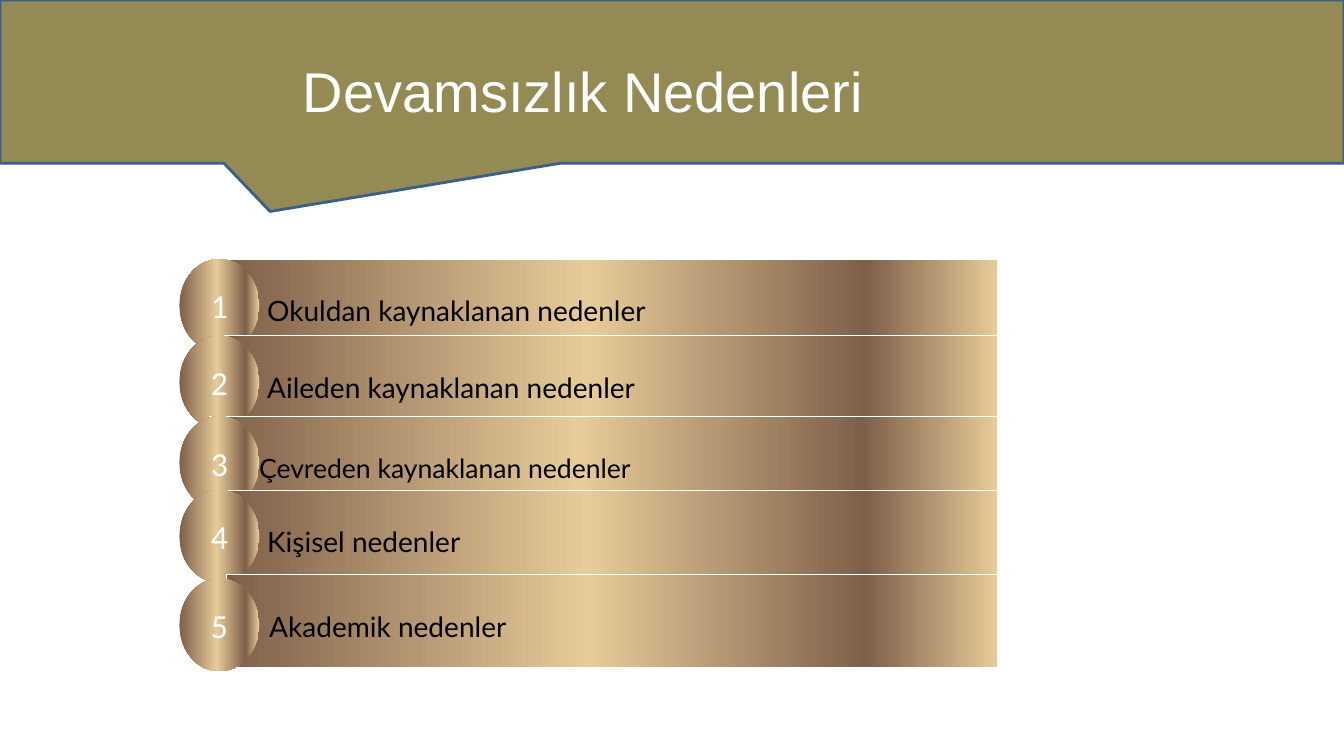
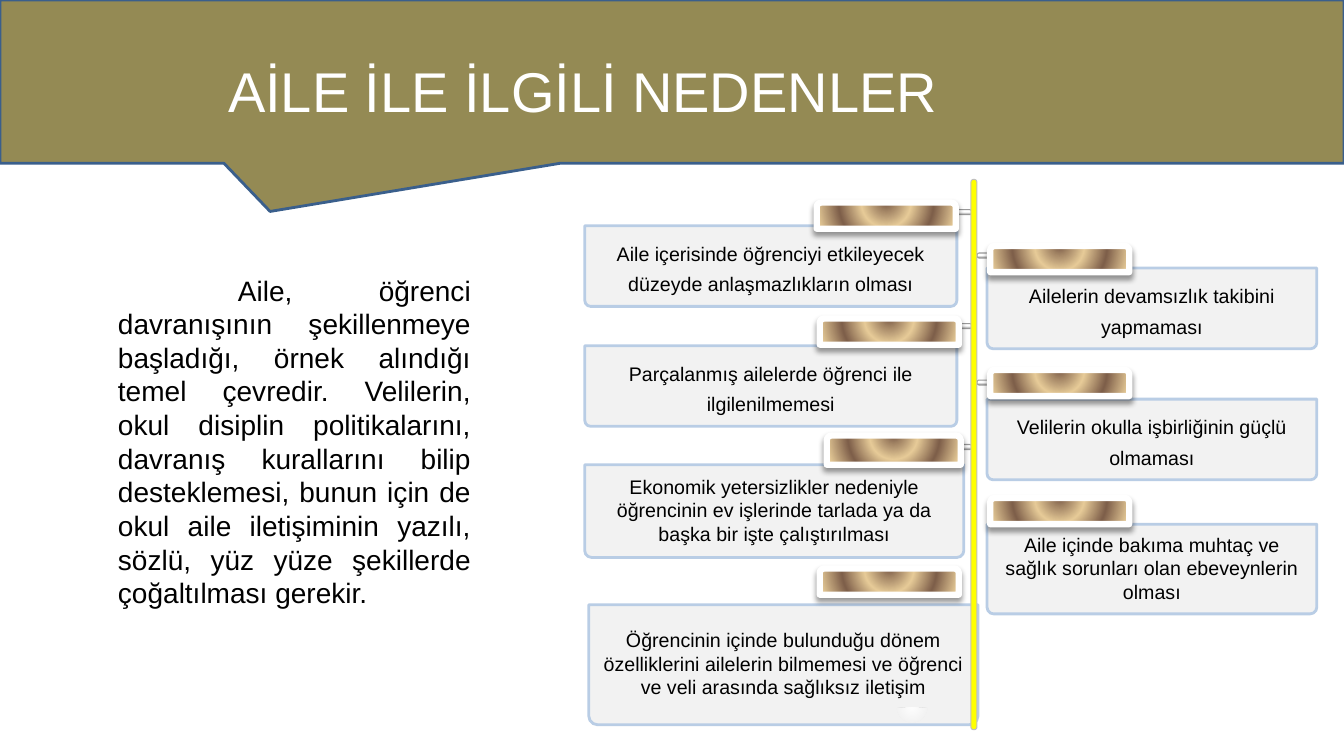
from lxml import etree
from pptx import Presentation
from pptx.dml.color import RGBColor
from pptx.enum.shapes import MSO_SHAPE
from pptx.enum.text import MSO_ANCHOR, PP_ALIGN
from pptx.oxml.ns import qn
from pptx.util import Inches, Pt

RECT = MSO_SHAPE.RECTANGLE
OVAL = MSO_SHAPE.OVAL
ROUND = MSO_SHAPE.ROUNDED_RECTANGLE
TOP_ROUND = MSO_SHAPE.ROUND_2_SAME_RECTANGLE
CALLOUT = MSO_SHAPE.RECTANGULAR_CALLOUT
LEFT, CENTER, JUSTIFY = PP_ALIGN.LEFT, PP_ALIGN.CENTER, PP_ALIGN.JUSTIFY
TOP, MIDDLE = MSO_ANCHOR.TOP, MSO_ANCHOR.MIDDLE

WHITE, BLACK = "FFFFFF", "000000"
OLIVE, NAVY = "948A54", "3A5F8C"
PALE, SKY = "F2F2F2", "B9CDE5"
GREY, SILVER, YELLOW = "999999", "BFBFBF", "FFFF00"
BROWN, GOLD = "7E5F4A", "E7CB98"

BAR_STOPS = [(0, BROWN), (47, GOLD), (83, BROWN), (100, GOLD)]
TAB_STOPS = [(0, BROWN), (35, GOLD), (67, BROWN), (100, GOLD)]
PIN_STOPS = [(0, GREY), (50, WHITE)]
GLOW_STOPS = [(0, WHITE), (30, WHITE, 0), (100, WHITE, 0)]

FULL_PAD = (0.12, 0.06, 0.12, 0.06)
CARD_PAD = (0.1, 0.05, 0.1, 0.05)

REASONS = [
    (0, 0.44, 0, "Okuldan kaynaklanan nedenler", 20),
    (0.76, 0.44, 0.76, "Aileden kaynaklanan nedenler", 20),
    (1.56, 0.29, 1.56, "Çevreden kaynaklanan nedenler", 19),
    (2.29, 0.44, 2.29, "Kişisel nedenler", 20),
    (3.13, 0.46, 3.17, "Akademik nedenler", 20),
]

CARDS = [
    ((0, 0.46, 3.69, 0.8), (2.3, 0.23, 1.38, 0.26),
     "Aile içerisinde öğrenciyi etkileyecek düzeyde anlaşmazlıkların olması"),
    ((0, 1.65, 3.69, 0.8), (2.33, 1.38, 1.38, 0.26),
     "Parçalanmış ailelerde öğrenci ile ilgilenilmemesi"),
    ((0, 2.83, 3.76, 0.92), (2.4, 2.54, 1.33, 0.29),
     "Ekonomik yetersizlikler nedeniyle öğrencinin ev işlerinde tarlada "
     "ya da başka bir işte çalıştırılması"),
    ((0.04, 4.22, 3.86, 1.19), (2.33, 3.86, 1.38, 0.26),
     "Öğrencinin içinde bulunduğu dönem özelliklerini ailelerin bilmemesi "
     "ve öğrenci ve veli arasında sağlıksız iletişim"),
    ((3.99, 0.88, 3.27, 0.8), (4.02, 0.66, 1.38, 0.26),
     "Ailelerin devamsızlık takibini yapmaması"),
    ((3.99, 2.18, 3.27, 0.8), (4.02, 1.89, 1.38, 0.26),
     "Velilerin okulla işbirliğinin güçlü olmaması"),
    ((3.99, 3.42, 3.27, 0.89), (4.02, 3.16, 1.38, 0.26),
     "Aile içinde bakıma muhtaç ve sağlık sorunları olan ebeveynlerin olması"),
]
PINS = [(2.65, 0.3), (2.65, 1.43), (2.65, 2.63), (3.89, 0.73), (3.89, 1.99)]

FAMILY = (
    "Aile, öğrenci davranışının şekillenmeye başladığı, örnek alındığı temel "
    "çevredir. Velilerin, okul disiplin politikalarını, davranış kurallarını "
    "bilip desteklemesi, bunun için de okul aile iletişiminin yazılı, sözlü, "
    "yüz yüze şekillerde çoğaltılması gerekir."
)


def rgb(code):
    return RGBColor.from_string(code)


def node(parent, tag, **attrs):
    return etree.SubElement(parent, qn(tag), {k: str(v) for k, v in attrs.items()})


def tint(parent, code, alpha=100):
    color = node(parent, "a:srgbClr", val=code)
    if alpha < 100:
        node(color, "a:alpha", val=alpha * 1000)


def blend(shape, stops, angle=0, radial=False):
    shape.fill.gradient()
    grad = shape._element.spPr.find(qn("a:gradFill"))
    for child in list(grad):
        grad.remove(child)
    group = node(grad, "a:gsLst")
    for pos, *color in stops:
        tint(node(group, "a:gs", pos=pos * 1000), *color)
    if radial:
        way = node(grad, "a:path", path="circle")
        node(way, "a:fillToRect", l=50000, t=-80000, r=50000, b=180000)
    else:
        node(grad, "a:lin", ang=angle * 60000, scaled=0)


def shade(shape):
    effects = shape._element.spPr.find(qn("a:effectLst"))
    drop = node(effects, "a:outerShdw", blurRad=Pt(4), dist=Pt(3),
                dir=90 * 60000, rotWithShape=0)
    tint(drop, BLACK, 40)


def move(origin, box):
    return (origin[0] + box[0], origin[1] + box[1], *box[2:])


def draw(slide, kind, box, fill=None, line=None, width=1, adj=()):
    shape = slide.shapes.add_shape(kind, *map(Inches, box))
    shape.shadow.inherit = False
    for i, value in enumerate(adj):
        shape.adjustments[i] = value
    if fill:
        shape.fill.solid()
        shape.fill.fore_color.rgb = rgb(fill)
    if line:
        shape.line.color.rgb = rgb(line)
        shape.line.width = Pt(width)
    else:
        shape.line.fill.background()
    return shape


def write(shape, text, size=14, font="Arial", color=BLACK, align=CENTER,
          anchor=MIDDLE, pad=CARD_PAD, space=None, margin=0, indent=0):
    frame = shape.text_frame
    frame.word_wrap = True
    frame.vertical_anchor = anchor
    (frame.margin_left, frame.margin_top,
     frame.margin_right, frame.margin_bottom) = map(Inches, pad)
    para = frame.paragraphs[0]
    para.alignment = align
    if space:
        para.line_spacing = space
    if indent:
        props = para._p.get_or_add_pPr()
        props.set("marL", str(Inches(margin)))
        props.set("indent", str(Inches(indent)))
    run = para.add_run()
    run.text = text
    run.font.size = Pt(size)
    run.font.name = font
    run.font.color.rgb = rgb(color)


def label(slide, box, text, **style):
    write(slide.shapes.add_textbox(*map(Inches, box)), text, **style)


def header(slide, box, title):
    draw(slide, CALLOUT, box, OLIVE, NAVY, 2, (-0.299, 0.795))
    label(slide, move(box, (0, 0.36, 11.56, 1.06)), title,
          size=40, color=WHITE, pad=FULL_PAD)


def reasons(slide, box):
    left, top, width, height = box
    for num, (drop, inset, dot_drop, text, size) in enumerate(REASONS, 1):
        bar = draw(slide, RECT, (left + inset, top + drop, width - inset, height),
                   line=WHITE, width=0.25)
        blend(bar, BAR_STOPS)
        gap = 0.5 if size < 20 else 0.43
        write(bar, text, size=size, font="Lato", align=LEFT,
              pad=(gap, 0, 0, 0), space=1.3)
        dot = draw(slide, OVAL, (left, top + dot_drop, 0.79, height))
        blend(dot, BAR_STOPS)
        write(dot, str(num), size=24, font="Calibri", color=WHITE, pad=(0, 0, 0, 0))


def tree(slide, box):
    for place, _, text in CARDS:
        card = draw(slide, TOP_ROUND, move(box, place), PALE, SKY, 2, (0, 0.073))
        write(card, text, space=1.3 if place[3] == 0.8 else None)
    glow = draw(slide, OVAL, move(box, (2.75, 5.24, 0.99, 0.29)))
    blend(glow, GLOW_STOPS, radial=True)
    for x, y in PINS:
        pin = draw(slide, ROUND, move(box, (x, y, 1.19, 0.05)),
                   line=GREY, width=0.75, adj=(0.442,))
        blend(pin, PIN_STOPS, angle=270)
    draw(slide, ROUND, move(box, (3.83, 0, 0.06, box[3])),
         YELLOW, SILVER, 0.75, (0.442,))
    for _, place, _ in CARDS:
        tab = draw(slide, TOP_ROUND, move(box, place), line=WHITE, width=4.5)
        blend(tab, TAB_STOPS, radial=True)
        shade(tab)


def start(deck, title):
    slide = deck.slides.add_slide(deck.slide_layouts[6])
    header(slide, (0, 0, 13.33, 1.62), title)
    return slide


def main():
    deck = Presentation()
    deck.slide_width, deck.slide_height = Inches(13.33), Inches(7.5)
    reasons(start(deck, "Devamsızlık Nedenleri"), (1.78, 2.57, 8.11, 0.92))
    slide = start(deck, "AİLE İLE İLGİLİ NEDENLER")
    label(slide, (0.6, 2.65, 4.19, 3.86), FAMILY, size=20, align=JUSTIFY,
          anchor=TOP, pad=FULL_PAD, margin=0.45, indent=1.19)
    tree(slide, (5.8, 1.78, 7.26, 5.46))
    deck.save("out.pptx")


if __name__ == "__main__":
    main()
